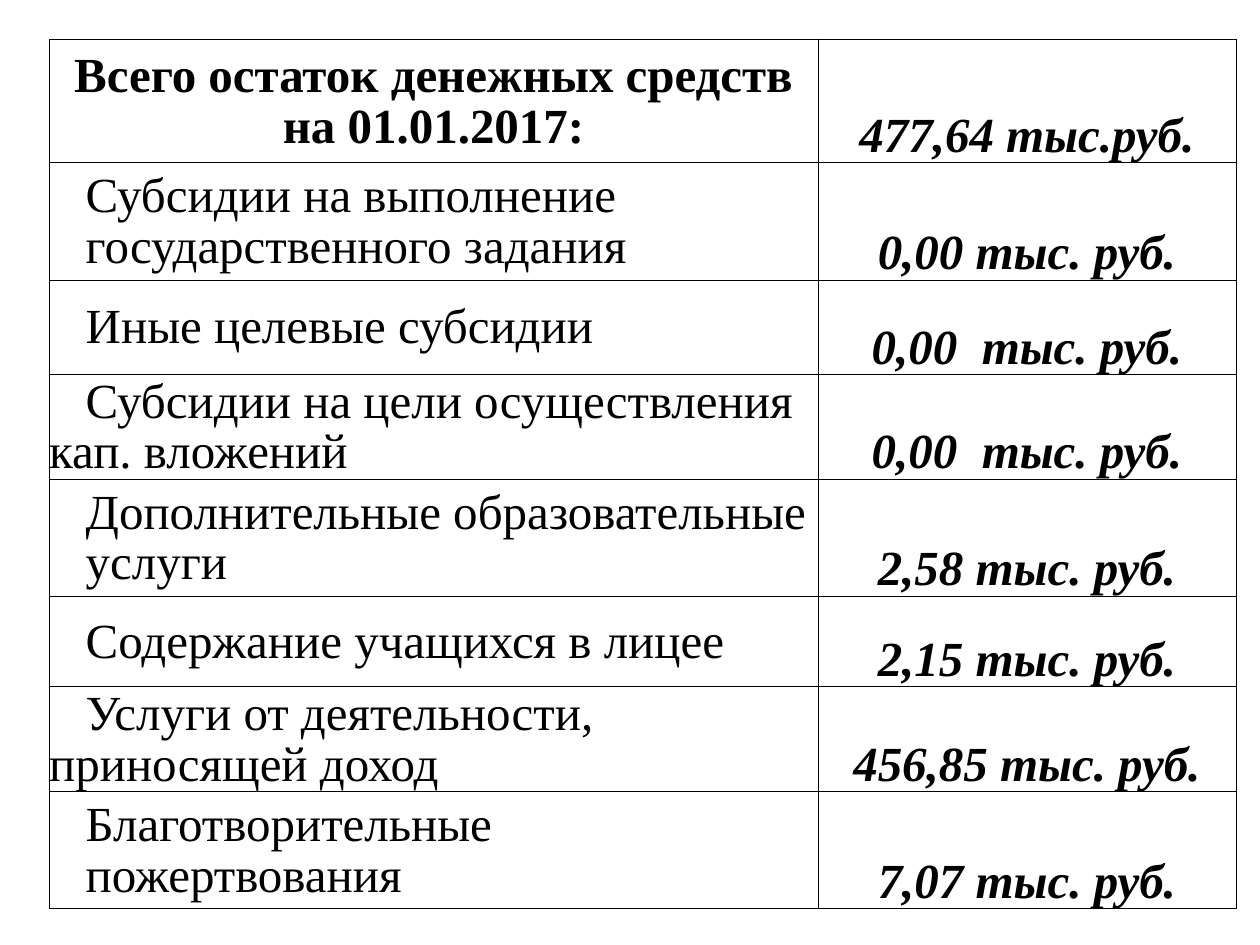
from dataclasses import dataclass

from pptx import Presentation
from pptx.dml.color import RGBColor as Color
from pptx.enum.text import MSO_ANCHOR as Anchor, PP_ALIGN as Align
from pptx.oxml.ns import qn
from pptx.util import Inches, Pt
from lxml.etree import SubElement as Sub


@dataclass(frozen=True)
class Theme:
    font: str = "Times New Roman"
    size: float = 28
    ink: str = "000000"
    line: float = 0.23
    lead: float = 0.93
    inset: float = 0.03
    indent: float = 0.29


THEME = Theme()
COLS = (6.1, 3.32)

# Row height, label paragraphs, amount
ROWS = (
    (0.98, ["Всего остаток денежных средств на 01.01.2017:"], "477,64 тыс.руб."),
    (0.93, ["Субсидии на выполнение", "государственного задания"], "0,00 тыс. руб."),
    (0.75, ["Иные целевые субсидии"], "0,00  тыс. руб."),
    (0.75, ["Субсидии на цели осуществления кап. вложений"], "0,00  тыс. руб."),
    (0.93, ["Дополнительные образовательные", "услуги"], "2,58 тыс. руб."),
    (0.72, ["Содержание учащихся в лицее"], "2,15 тыс. руб."),
    (0.79, ["Услуги от деятельности, приносящей доход"], "456,85 тыс. руб."),
    (0.93, ["Благотворительные", "пожертвования"], "7,07 тыс. руб."),
)


def frame(cell):
    """Draw thin lines on all four sides and clear the fill."""
    props = cell._tc.get_or_add_tcPr()
    for side in ("lnL", "lnR", "lnT", "lnB"):
        line = Sub(props, qn(f"a:{side}"), w=str(Pt(THEME.line)))
        Sub(Sub(line, qn("a:solidFill")), qn("a:srgbClr"), val=THEME.ink)
    cell.fill.background()


def write(cell, lines, anchor, align, bold=False, italic=False):
    """Fill a cell; left-set text gets a first-line indent."""
    cell.margin_left = cell.margin_right = cell.margin_bottom = 0
    cell.margin_top = Inches(THEME.inset)
    cell.vertical_anchor = anchor
    box = cell.text_frame
    for n, text in enumerate(lines):
        para = box.add_paragraph() if n else box.paragraphs[0]
        para.alignment, para.line_spacing = align, THEME.lead
        if align == Align.LEFT:
            props = para._p.get_or_add_pPr()
            props.set("marL", "0")
            props.set("indent", str(Inches(THEME.indent)))
        run = para.add_run()
        run.text = text
        font = run.font
        font.name, font.size = THEME.font, Pt(THEME.size)
        font.bold, font.italic = bold, italic
        font.color.rgb = Color.from_string(THEME.ink)


def add_grid(slide):
    """Add the table of cash balances."""
    high = sum(row[0] for row in ROWS)
    grid = slide.shapes.add_table(
        len(ROWS), len(COLS), Inches(0.39), Inches(0.31),
        Inches(sum(COLS)), Inches(high)).table
    grid.first_row = grid.horz_banding = False
    for col, wide in zip(grid.columns, COLS):
        col.width = Inches(wide)
    for n, (tall, label, sum_text) in enumerate(ROWS):
        grid.rows[n].height = Inches(tall)
        left, right = grid.cell(n, 0), grid.cell(n, 1)
        # The first row holds the total
        total = n == 0
        write(left, label, Anchor.MIDDLE,
              Align.CENTER if total else Align.LEFT, bold=total)
        write(right, [sum_text], Anchor.BOTTOM, Align.CENTER,
              bold=True, italic=True)
        frame(left)
        frame(right)


def main():
    deck = Presentation()
    deck.slide_width, deck.slide_height = Inches(10), Inches(7.5)
    add_grid(deck.slides.add_slide(deck.slide_layouts[6]))
    deck.save("out.pptx")


if __name__ == "__main__":
    main()
